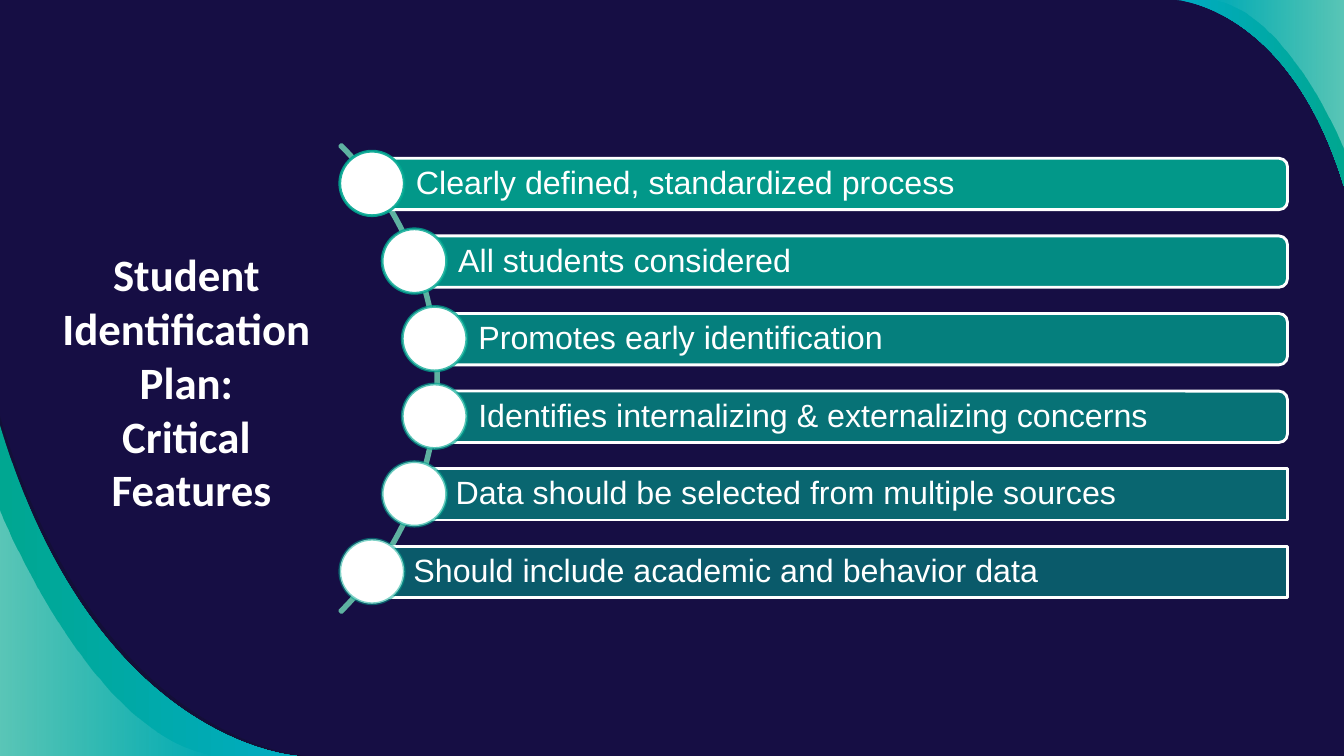
import pptx
import pptx.dml.color
import pptx.enum.shapes
import pptx.enum.text
import pptx.util
from lxml import etree
from pptx.oxml.ns import qn

Inches = pptx.util.Inches
Pt = pptx.util.Pt
RGBColor = pptx.dml.color.RGBColor
MSO_SHAPE = pptx.enum.shapes.MSO_SHAPE
PP_ALIGN = pptx.enum.text.PP_ALIGN
MSO_ANCHOR = pptx.enum.text.MSO_ANCHOR

NAVY = RGBColor(0x16, 0x0E, 0x44)
SHADE = RGBColor(0x12, 0x10, 0x2F)
CYAN = RGBColor(0x00, 0xAC, 0xC2)
GREEN = RGBColor(0x00, 0xA7, 0x91)
SAGE = RGBColor(0x5E, 0xB2, 0xA1)
WHITE = RGBColor(0xFF, 0xFF, 0xFF)


def add_corner(shapes, corner, curve):
    """Draw the area between a slide corner and a cubic Bezier curve."""
    start, *controls, end = [(Inches(x), Inches(y)) for x, y in curve]
    builder = shapes.build_freeform(*start)
    builder.add_line_segments([end, (Inches(corner[0]), Inches(corner[1]))], close=True)
    shape = builder.convert_to_shape()
    straight = next(shape._element.iter(qn("a:lnTo")))
    bend = etree.Element(qn("a:cubicBezTo"))
    for x, y in (*controls, end):
        etree.SubElement(bend, qn("a:pt"), x=str(x - shape.left), y=str(y - shape.top))
    straight.getparent().replace(straight, bend)
    shape.shadow.inherit = False
    shape.line.fill.background()
    return shape


def set_alpha(shape, parent, *percents):
    """Set the opacity of the colours in one part of the shape properties."""
    colors = shape._element.spPr.find(qn(parent)).iter(qn("a:srgbClr"))
    for color, percent in zip(colors, percents):
        etree.SubElement(color, qn("a:alpha")).set("val", str(percent * 1000))


deck = pptx.Presentation()
deck.slide_width = Inches(13.33)
deck.slide_height = Inches(7.5)
page = deck.slides.add_slide(deck.slide_layouts[6])
page.background.fill.solid()
page.background.fill.fore_color.rgb = NAVY
shapes = page.shapes

# Curved corners
bottom_left, top_right = (0, 7.5), (13.33, 0)
shade = add_corner(shapes, bottom_left, [(0, 4.13), (0.98, 7.39), (3.03, 7.5), (3.03, 7.5)])
shade.fill.solid()
shade.fill.fore_color.rgb = SHADE
set_alpha(shade, "a:solidFill", 54)

waves = [
    (bottom_left, [(0, 4.22), (0.95, 7.39), (2.95, 7.5), (2.95, 7.5)], (GREEN, CYAN), (100, 100)),
    (bottom_left, [(0, 5.06), (0, 5.06), (0.91, 7.35), (2.16, 7.5)], (WHITE, WHITE), (36, 0)),
    (top_right, [(11.67, 0), (11.67, 0), (12.79, 0.06), (13.33, 1.85)], (CYAN, GREEN), (100, 100)),
    (top_right, [(12.01, 0), (12.77, 0.09), (13.33, 1.49), (13.33, 1.49)], (WHITE, WHITE), (0, 36)),
]
for corner, curve, colors, opacities in waves:
    wave = add_corner(shapes, corner, curve)
    wave.fill.gradient()
    wave.fill.gradient_angle = 0
    for stop, color in zip(wave.fill.gradient_stops, colors):
        stop.color.rgb = color
    set_alpha(wave, "a:gradFill", *opacities)

# Title
title = shapes.add_textbox(Inches(-0.53), Inches(2.35), Inches(4.86), Inches(3.21))
frame = title.text_frame
frame.word_wrap = True
frame.margin_left = frame.margin_right = frame.margin_top = frame.margin_bottom = Inches(0.1)
para = frame.paragraphs[0]
para.text = "Student \vIdentification \vPlan: \vCritical \vFeatures"
para.alignment = PP_ALIGN.CENTER
para.font.name = "Calibri"
para.font.size = Pt(32)
para.font.bold = True
para.font.color.rgb = WHITE

# Arc behind the feature list
arc = shapes.add_shape(MSO_SHAPE.BLOCK_ARC, Inches(-2.22), Inches(0.47), Inches(6.57), Inches(6.57))
for index, value in enumerate((189, 27, 0.004)):
    arc.adjustments[index] = value
arc.shadow.inherit = False
arc.fill.background()
arc.line.color.rgb = SAGE
arc.line.width = Pt(2)

# Feature bars, each with a circle on the arc
features = [
    ("Clearly defined, standardized process", 3.37, MSO_SHAPE.ROUNDED_RECTANGLE),
    ("All students considered", 3.79, MSO_SHAPE.ROUNDED_RECTANGLE),
    ("Promotes early identification", 3.99, MSO_SHAPE.ROUNDED_RECTANGLE),
    ("Identifies internalizing & externalizing concerns", 3.99, MSO_SHAPE.ROUNDED_RECTANGLE),
    ("Data should be selected from multiple sources", 3.79, MSO_SHAPE.RECTANGLE),
    ("Should include academic and behavior data", 3.37, MSO_SHAPE.RECTANGLE),
]
BAR_RIGHT, BAR_HEIGHT, CIRCLE_SIZE = 12.77, 0.51, 0.64
for row, (text, circle_left, bar_kind) in enumerate(features):
    bar_top = 1.57 + 0.77 * row
    bar_left = circle_left + CIRCLE_SIZE / 2
    opacity = 90 - 8 * row

    bar = shapes.add_shape(bar_kind, Inches(bar_left), Inches(bar_top),
                           Inches(BAR_RIGHT - bar_left), Inches(BAR_HEIGHT))
    bar.shadow.inherit = False
    bar.fill.solid()
    bar.fill.fore_color.rgb = GREEN
    set_alpha(bar, "a:solidFill", opacity)
    bar.line.color.rgb = WHITE
    bar.line.width = Pt(2)
    frame = bar.text_frame
    frame.word_wrap = True
    frame.vertical_anchor = MSO_ANCHOR.MIDDLE
    frame.margin_left = Inches(0.41)
    frame.margin_right = frame.margin_top = frame.margin_bottom = Inches(0.06)
    para = frame.paragraphs[0]
    para.text = text
    para.alignment = PP_ALIGN.LEFT
    para.line_spacing = 0.9
    para.font.name = "Arial"
    para.font.size = Pt(23)
    para.font.color.rgb = WHITE

    circle = shapes.add_shape(MSO_SHAPE.OVAL, Inches(circle_left), Inches(bar_top - 0.07),
                              Inches(CIRCLE_SIZE), Inches(CIRCLE_SIZE))
    circle.shadow.inherit = False
    circle.fill.solid()
    circle.fill.fore_color.rgb = WHITE
    circle.line.color.rgb = GREEN
    circle.line.width = Pt(2)
    set_alpha(circle, "a:ln", opacity)

deck.save("out.pptx")
